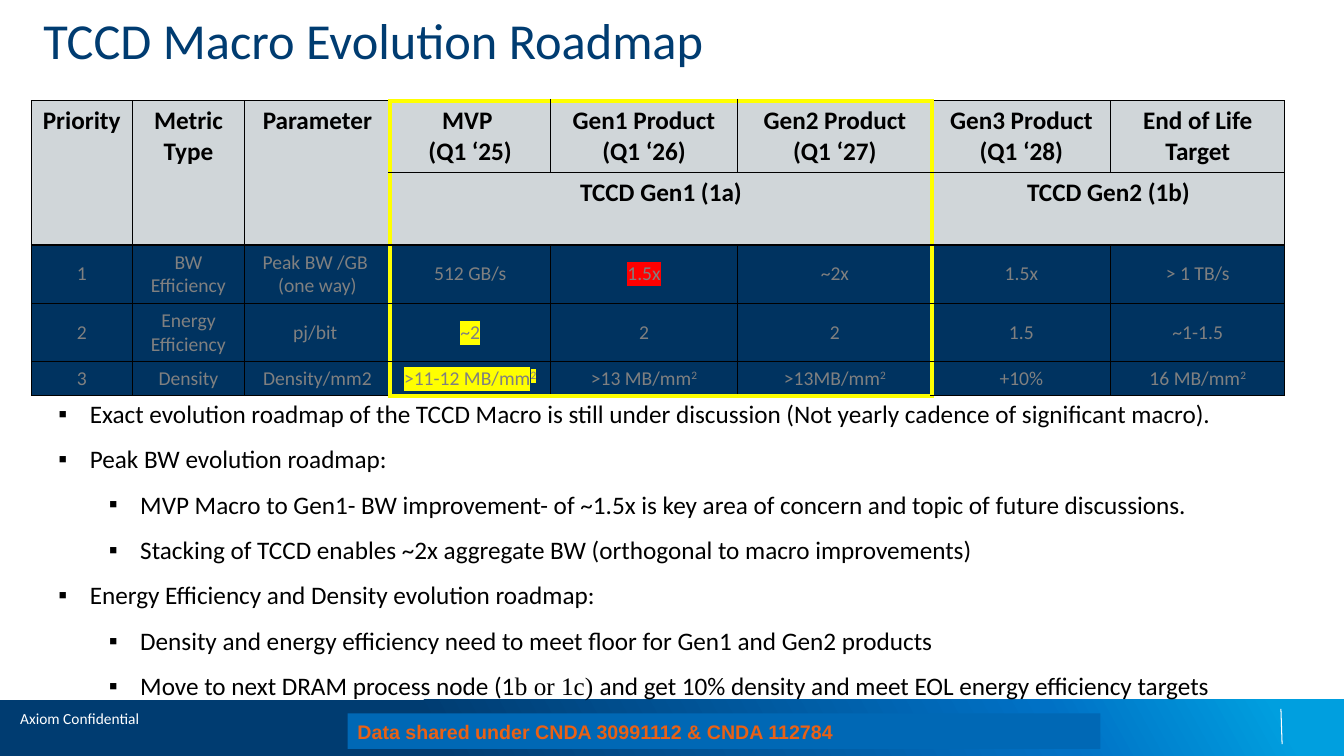
from lxml import etree
from pptx import Presentation
from pptx.dml.color import RGBColor
from pptx.enum.shapes import MSO_CONNECTOR, MSO_SHAPE
from pptx.enum.text import MSO_ANCHOR, MSO_AUTO_SIZE, PP_ALIGN
from pptx.oxml.ns import qn
from pptx.util import Cm, Pt

RECT, STRAIGHT = MSO_SHAPE.RECTANGLE, MSO_CONNECTOR.STRAIGHT
LEFT, CENTER = PP_ALIGN.LEFT, PP_ALIGN.CENTER
TOP, MIDDLE = MSO_ANCHOR.TOP, MSO_ANCHOR.MIDDLE
NO_FIT = MSO_AUTO_SIZE.NONE

COLORS = {
    "navy": "003C71", "blue": "0071C5", "sky": "009FDF", "note": "0068B5",
    "orange": "E96115", "header": "D0D6D9", "row": "003360", "muted": "808080",
    "black": "000000", "white": "FFFFFF", "yellow": "FFFF00", "red": "FF0000",
}

COL_WIDTHS = [2.54, 2.84, 3.66, 4.04, 4.72, 4.9, 4.5, 4.39]
ROW_HEIGHTS = [1.8, 1.83, 1.47, 1.47, 0.86]
HEADER_ROWS = 2
ROADMAP = [
    ["Priority", "Metric Type", "Parameter", "MVP \n(Q1 ‘25)",
     "Gen1 Product\n(Q1 ‘26)", "Gen2 Product\n(Q1 ‘27)",
     "Gen3 Product\n(Q1 ‘28)", "End of Life Target"],
    ["", "", "", "TCCD Gen1 (1a)", "", "", "TCCD Gen2 (1b)", ""],
    ["1", "BW Efficiency", "Peak BW /GB \n(one way)", "512 GB/s", "1.5x",
     "~2x", "1.5x", "> 1 TB/s"],
    ["2", "Energy Efficiency", "pj/bit ", "~2", "2", "2", "1.5", "~1-1.5"],
    ["3", "Density", "Density/mm2", ">11-12 MB/mm^2", ">13 MB/mm^2",
     ">13MB/mm^2", "+10%", "16 MB/mm^2"],
]
MERGES = [(0, 0, 1, 0), (0, 1, 1, 1), (0, 2, 1, 2), (1, 3, 1, 5), (1, 6, 1, 7)]
HIGHLIGHTS = {(2, 4): "red", (3, 3): "yellow", (4, 3): "yellow"}
FRAME_LEFT, FRAME_RIGHT = 3, 6

BULLETS = [
    (0, [("Exact evolution roadmap of the TCCD Macro is still under discussion "
          "(Not yearly cadence of significant macro).", "Calibri")]),
    (0, [("Peak BW evolution roadmap:", "Calibri")]),
    (1, [("MVP Macro to Gen1- BW improvement- of ~1.5x is key area of concern "
          "and topic of future discussions.", "Calibri")]),
    (1, [("Stacking of TCCD enables ~2x aggregate BW "
          "(orthogonal to macro improvements)", "Calibri")]),
    (0, [("Energy Efficiency and Density evolution roadmap:", "Calibri")]),
    (1, [("Density and energy efficiency need to meet floor for Gen1 and Gen2 "
          "products", "Calibri")]),
    (1, [("Move to next DRAM process node (1", "Calibri"),
         ("b or 1c) ", "Times New Roman"),
         ("and get 10% density and meet EOL energy efficiency targets", "Calibri")]),
]


def rgb(name):
    return RGBColor.from_string(COLORS[name])


def add_color(parent, name):
    etree.SubElement(parent, qn("a:srgbClr"), val=COLORS[name])


class RoadmapSlide:
    def __init__(self, prs, font="Calibri"):
        self.s = prs.slides.add_slide(prs.slide_layouts[1])
        self.font = font

    def run(self, p, text, size, color, bold=False, font=None, highlight=None, raised=False):
        r = p.add_run()
        r.text = text
        r.font.size, r.font.bold = Pt(size), bold
        r.font.color.rgb = rgb(color)
        r.font.name = font or self.font
        rPr = r.font._element
        if raised:
            rPr.set("baseline", "30000")
        if highlight:
            mark = etree.Element(qn("a:highlight"))
            add_color(mark, highlight)
            rPr.find(qn("a:solidFill")).addnext(mark)

    def frame(self, sp, margin=None, anchor=TOP):
        tf = sp.text_frame
        tf.word_wrap, tf.auto_size, tf.vertical_anchor = True, NO_FIT, anchor
        if margin is not None:
            tf.margin_left = tf.margin_right = Cm(margin)
            tf.margin_top = tf.margin_bottom = Cm(margin)
        tf.paragraphs[0].alignment = LEFT
        return tf

    def placeholder(self, index, x, y, w, h):
        sp = self.s.placeholders[index]
        sp.left, sp.top, sp.width, sp.height = Cm(x), Cm(y), Cm(w), Cm(h)
        self.s.shapes._spTree.append(sp._element)
        return sp

    def title(self, text, *box):
        tf = self.frame(self.placeholder(0, *box), margin=0)
        self.run(tf.paragraphs[0], text, 36, "navy")

    def bullets(self, items, *box):
        tf = self.frame(self.placeholder(1, *box))
        for i, (level, runs) in enumerate(items):
            p = tf.paragraphs[0] if i == 0 else tf.add_paragraph()
            p.level, p.alignment = level, LEFT
            pPr = p._p.get_or_add_pPr()
            pPr.set("marL", str(Cm(0.79 + 1.27 * level)))
            pPr.set("indent", str(-Cm(0.79)))
            etree.SubElement(pPr, qn("a:buFont"), typeface="Arial")
            etree.SubElement(pPr, qn("a:buChar"), char="▪")
            p.line_spacing, p.space_before = 1.5, Pt(0)
            for text, font in runs:
                self.run(p, text, 18, "black", font=font)

    def rect(self, x, y, w, h):
        sp = self.s.shapes.add_shape(RECT, Cm(x), Cm(y), Cm(w), Cm(h))
        sp.shadow.inherit = False
        sp.line.fill.background()
        return sp

    def gradient_bar(self, stops, angle, *box):
        sp = self.rect(*box)
        sp.fill.gradient()
        sp.fill.gradient_angle = angle
        stop_list = sp._element.spPr.find(qn("a:gradFill")).find(qn("a:gsLst"))
        for old in list(stop_list):
            stop_list.remove(old)
        for percent, color in stops:
            stop = etree.SubElement(stop_list, qn("a:gs"), pos=str(percent * 1000))
            add_color(stop, color)

    def note(self, text, *box):
        sp = self.rect(*box)
        sp.fill.solid()
        sp.fill.fore_color.rgb = rgb("note")
        tf = self.frame(sp, anchor=MIDDLE)
        self.run(tf.paragraphs[0], text, 14, "orange", bold=True, font="Arial")

    def label(self, text, x, y, w, h):
        sp = self.s.shapes.add_textbox(Cm(x), Cm(y), Cm(w), Cm(h))
        tf = self.frame(sp, margin=0)
        self.run(tf.paragraphs[0], text, 11, "white")

    def line(self, x1, y1, x2, y2):
        ln = self.s.shapes.add_connector(STRAIGHT, Cm(x1), Cm(y1), Cm(x2), Cm(y2))
        ln.line.color.rgb, ln.line.width = rgb("white"), Pt(0.75)
        etree.SubElement(ln._element.spPr, qn("a:effectLst"))

    def borders(self, cell, row, col):
        right = col + (cell.span_width if cell.is_merge_origin else 1)
        in_frame = FRAME_LEFT <= col < FRAME_RIGHT
        sides = {
            "L": col in (FRAME_LEFT, FRAME_RIGHT),
            "R": right in (FRAME_LEFT, FRAME_RIGHT),
            "T": in_frame and row == 0,
            "B": in_frame and row == len(ROADMAP) - 1,
        }
        tcPr = cell._tc.get_or_add_tcPr()
        for side, framed in sides.items():
            ln = etree.SubElement(tcPr, qn("a:ln" + side), w=str(Pt(3 if framed else 1)))
            add_color(etree.SubElement(ln, qn("a:solidFill")), "yellow" if framed else "black")

    def table(self, rows, x, y):
        shape = self.s.shapes.add_table(
            len(rows), len(COL_WIDTHS), Cm(x), Cm(y),
            Cm(sum(COL_WIDTHS)), Cm(sum(ROW_HEIGHTS)))
        tbl = shape.table
        tbl.first_row = tbl.horz_banding = False
        for column, width in zip(tbl.columns, COL_WIDTHS):
            column.width = Cm(width)
        for row, height in zip(tbl.rows, ROW_HEIGHTS):
            row.height = Cm(height)
        for r1, c1, r2, c2 in MERGES:
            tbl.cell(r1, c1).merge(tbl.cell(r2, c2))
        for i, texts in enumerate(rows):
            header = i < HEADER_ROWS
            size, color = (18, "black") if header else (14, "muted")
            for j, text in enumerate(texts):
                cell = tbl.cell(i, j)
                self.borders(cell, i, j)
                cell.fill.solid()
                cell.fill.fore_color.rgb = rgb("header" if header else "row")
                cell.vertical_anchor = TOP if header else MIDDLE
                if cell.is_spanned:
                    continue
                tf = cell.text_frame
                for k, line in enumerate(text.split("\n")):
                    p = tf.paragraphs[0] if k == 0 else tf.add_paragraph()
                    p.alignment = CENTER
                    for n, part in enumerate(line.split("^")):
                        self.run(p, part, size, color, bold=header,
                                 highlight=HIGHLIGHTS.get((i, j)), raised=n == 1)


def main():
    prs = Presentation()
    prs.slide_width, prs.slide_height = Cm(33.87), Cm(19.05)
    slide = RoadmapSlide(prs)
    slide.gradient_bar([(32, "navy"), (78, "blue"), (95, "sky")], 29, 0, 17.63, 33.87, 1.42)
    slide.line(32.28, 17.86, 32.31, 18.75)
    slide.label("Axiom Confidential", 0.51, 17.86, 4.45, 0.48)
    slide.note("Data shared under CNDA 30991112 & CNDA 112784", 8.76, 17.98, 18.97, 0.89)
    slide.title("TCCD Macro Evolution Roadmap", 1.09, 0.23, 30.48, 2.51)
    slide.table(ROADMAP, 0.79, 2.54)
    slide.bullets(BULLETS, 1.22, 9.53, 31.6, 8.2)
    prs.save("out.pptx")


if __name__ == "__main__":
    main()
